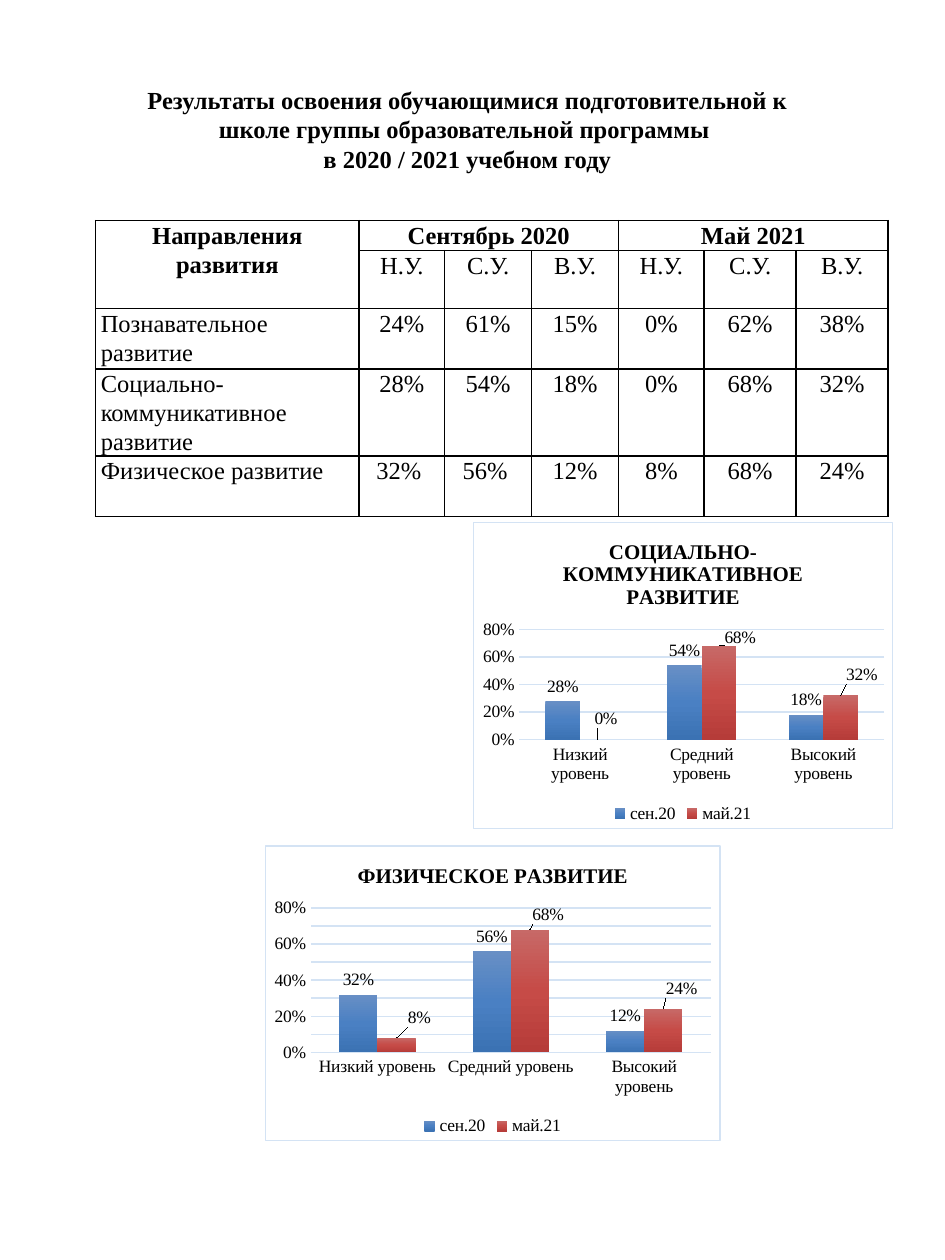
"""Build a one-page report with a results table and two column charts."""
from lxml.etree import SubElement
from pptx import Presentation
from pptx.chart.data import CategoryChartData
from pptx.dml.color import RGBColor
from pptx.enum.chart import XL_CHART_TYPE, XL_LABEL_POSITION, XL_LEGEND_POSITION, XL_TICK_MARK
from pptx.enum.text import MSO_ANCHOR, PP_ALIGN
from pptx.oxml import parse_xml
from pptx.oxml.ns import nsdecls, qn
from pptx.util import Inches, Pt

BLACK = RGBColor(0x00, 0x00, 0x00)
WHITE = RGBColor(0xFF, 0xFF, 0xFF)
GRID = RGBColor(0xD4, 0xE3, 0xF4)
BLUES = RGBColor(0x68, 0x8F, 0xC5), RGBColor(0x4A, 0x80, 0xC3), RGBColor(0x3B, 0x72, 0xB3)
REDS = RGBColor(0xC7, 0x69, 0x67), RGBColor(0xC6, 0x4B, 0x47), RGBColor(0xB6, 0x3C, 0x39)

TITLE = ["Результаты освоения обучающимися подготовительной к школе группы "
         "образовательной программы ", "в 2020 / 2021 учебном году"]
LEVELS = ["Н.У.", "С.У.", "В.У."]
ROWS = [
    ["Направления развития", "Сентябрь 2020", "", "", "Май 2021", "", ""],
    [""] + LEVELS * 2,
    ["Познавательное развитие", "24%", "61%", "15%", "0%", "62%", "38%"],
    ["Социально-коммуникативное развитие", "28%", "54%", "18%", "0%", "68%", "32%"],
    ["Физическое развитие", "32% ", "56% ", "12%", "8%", "68%", "24%"],
]
MERGES = [(0, 0, 1, 0), (0, 1, 0, 3), (0, 4, 0, 6)]
CATEGORIES = ["Низкий уровень", "Средний уровень", "Высокий уровень"]
SERIES = [("сен.20", BLUES), ("май.21", REDS)]


def solid_line(tag, color, width):
    return (f'<{tag} {nsdecls("a")} w="{Pt(width)}"><a:solidFill><a:srgbClr val="{color}"/>'
            f'</a:solidFill></{tag}>')


def set_layout(parent, **values):
    layout = SubElement(SubElement(parent, qn("c:layout")), qn("c:manualLayout"))
    for name, value in values.items():
        SubElement(layout, qn(f"c:{name}")).set("val", str(value))
    return layout.getparent()


class Page:
    """Hold the style and current slide on a grid of tenths of an inch."""
    font = "Times New Roman"
    text_size, label_size, chart_title_size = 14, 10, 12

    def __init__(self, prs):
        self.slide = prs.slides.add_slide(prs.slide_layouts[5])
        self.col, self.row = prs.slide_width / 75, prs.slide_height / 100

    def box(self, col, row, cols, rows):
        return (round(col * self.col), round(row * self.row),
                round(cols * self.col), round(rows * self.row))

    def style(self, font, size, bold=False):
        font.name, font.size, font.bold = self.font, Pt(size), bold
        font.color.rgb = BLACK

    def title(self, lines, *place):
        sp = self.slide.shapes.title
        sp.left, sp.top, sp.width, sp.height = self.box(*place)
        tf = sp.text_frame
        tf.text = "\n".join(lines)
        tf.word_wrap, tf.vertical_anchor = True, MSO_ANCHOR.MIDDLE
        for p in tf.paragraphs:
            p.alignment, p.space_before = PP_ALIGN.CENTER, Pt(0)
            self.style(p.runs[0].font, self.text_size, True)

    def table(self, rows, merges, col, row, widths, heights):
        place = self.box(col, row, sum(widths), sum(heights))
        table = self.slide.shapes.add_table(len(rows), len(widths), *place).table
        table.first_row = table.horz_banding = False
        for column, width in zip(table.columns, widths):
            column.width = round(width * self.col)
        for line, height in zip(table.rows, heights):
            line.height = round(height * self.row)
        for r, texts in enumerate(rows):
            for c, text in enumerate(texts):
                self.cell(table.cell(r, c), text, r == 0, r > 1 and c == 0)
        for r1, c1, r2, c2 in merges:
            table.cell(r1, c1).merge(table.cell(r2, c2))

    def cell(self, cell, text, bold, left):
        cell.margin_left = cell.margin_right = Inches(0.04)
        cell.margin_top = cell.margin_bottom = 0
        p = cell.text_frame.paragraphs[0]
        p.text, p.line_spacing = text, 1.07
        p.alignment = PP_ALIGN.LEFT if left else PP_ALIGN.CENTER
        for r in p.runs:
            self.style(r.font, self.text_size, bold)
        props = cell._tc.get_or_add_tcPr()
        for side in "LRTB":
            props.append(parse_xml(solid_line(f"a:ln{side}", BLACK, 1)))
        cell.fill.background()

    def chart(self, title, values, shifts, plot, minor, *place):
        data = CategoryChartData(number_format="0%")
        data.categories = CATEGORIES
        for (name, _), numbers in zip(SERIES, values):
            data.add_series(name, numbers)
        chart = self.slide.shapes.add_chart(
            XL_CHART_TYPE.COLUMN_CLUSTERED, *self.box(*place), data).chart
        self.style(chart.font, self.label_size)
        chart._chartSpace.find(qn("c:txPr")).addprevious(parse_xml(
            f'<c:spPr {nsdecls("c", "a")}><a:solidFill><a:srgbClr val="{WHITE}"/></a:solidFill>'
            f'{solid_line("a:ln", GRID, 0.75)}</c:spPr>'))
        chart.has_title = True
        p = chart.chart_title.text_frame.paragraphs[0]
        p.text = title
        self.style(p.runs[0].font, self.chart_title_size, True)
        chart.has_legend = True
        chart.legend.position = XL_LEGEND_POSITION.BOTTOM
        chart.legend.include_in_layout = False
        self.style(chart.legend.font, self.label_size)
        self.axes(chart, minor)
        area = chart._chartSpace.chart.plotArea
        for old in area.findall(qn("c:layout")):
            area.remove(old)
        x, y, w, h = plot
        area.insert(0, set_layout(area, layoutTarget="inner", xMode="edge", yMode="edge",
                                  x=x, y=y, w=w, h=h))
        bars = chart.plots[0]
        bars.gap_width, bars.overlap, bars.vary_by_categories = 150, 0, False
        for series, (_, colors) in zip(bars.series, SERIES):
            self.series(series, colors)
        self.shift_labels(bars.series[1], shifts)

    def axes(self, chart, minor):
        for axis in (chart.category_axis, chart.value_axis):
            axis.major_tick_mark = axis.minor_tick_mark = XL_TICK_MARK.NONE
            self.style(axis.tick_labels.font, self.label_size)
        axis = chart.value_axis
        for item in (chart.category_axis, axis.major_gridlines):
            item.format.line.color.rgb, item.format.line.width = GRID, Pt(0.75)
        axis.format.line.fill.background()
        axis.minimum_scale, axis.maximum_scale, axis.major_unit = 0, 0.8, 0.2
        axis.tick_labels.number_format = "0%"
        axis.tick_labels.number_format_is_linked = False
        if minor:
            axis.has_minor_gridlines, axis.minor_unit = True, 0.1
            axis._element.find(qn("c:minorGridlines")).append(parse_xml(
                f'<c:spPr {nsdecls("c")}>{solid_line("a:ln", GRID, 0.75)}</c:spPr>'))

    def series(self, series, colors):
        stops = "".join(f'<a:gs pos="{i * 50000}"><a:srgbClr val="{color}"/></a:gs>'
                        for i, color in enumerate(colors))
        series._element.get_or_add_spPr().append(parse_xml(
            f'<a:gradFill {nsdecls("a")} rotWithShape="1"><a:gsLst>{stops}</a:gsLst>'
            '<a:lin ang="5400000" scaled="0"/></a:gradFill>'))
        series.invert_if_negative = False
        labels = series.data_labels
        labels.show_value, labels.position = True, XL_LABEL_POSITION.OUTSIDE_END
        labels.number_format, labels.number_format_is_linked = "0%", False
        self.style(labels.font, self.label_size)

    def shift_labels(self, series, shifts):
        for i, (x, y) in enumerate(shifts):
            label = series.points[i].data_label
            self.style(label.font, self.label_size)
            label.position = XL_LABEL_POSITION.OUTSIDE_END
            item = series._element.findall(f'.//{qn("c:dLbl")}')[i]
            item.insert(1, set_layout(item, x=x, y=y))


def main():
    prs = Presentation()
    prs.slide_width, prs.slide_height = Inches(7.5), Inches(10)
    page = Page(prs)
    page.table(ROWS, MERGES, 7.6, 17.5, [20.9, 6.8, 6.9, 6.9, 6.8, 7.3, 7.3],
               [2.4, 4.6, 4.8, 6.9, 4.8])
    page.chart("СОЦИАЛЬНО-КОММУНИКАТИВНОЕ РАЗВИТИЕ", [(0.28, 0.54, 0.18), (0, 0.68, 0.32)],
               [(0.02, -0.02), (0.05, 0.02), (0.05, -0.02)], (0.11, 0.35, 0.87, 0.36), False,
               37.5, 41.4, 33.4, 24.4)
    page.chart("ФИЗИЧЕСКОЕ РАЗВИТИЕ", [(0.32, 0.56, 0.12), (0.08, 0.68, 0.24)],
               [(0.05, -0.02), (0.04, 0), (0.04, -0.02)], (0.1, 0.21, 0.88, 0.49), True,
               21, 67.1, 36.2, 23.5)
    page.title(TITLE, 10.2, 6.2, 53.8, 8.1)
    prs.save("out.pptx")


if __name__ == "__main__":
    main()
